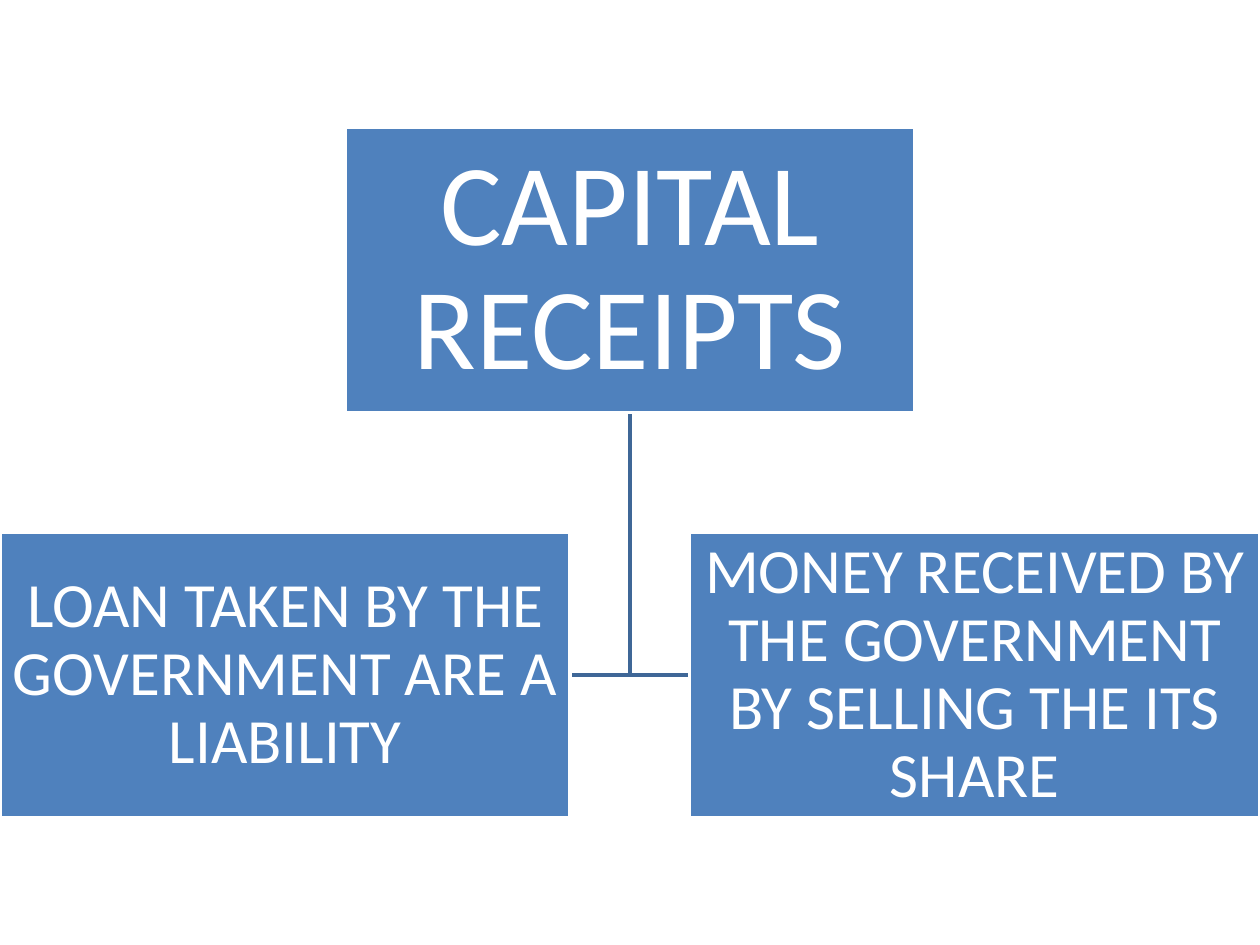
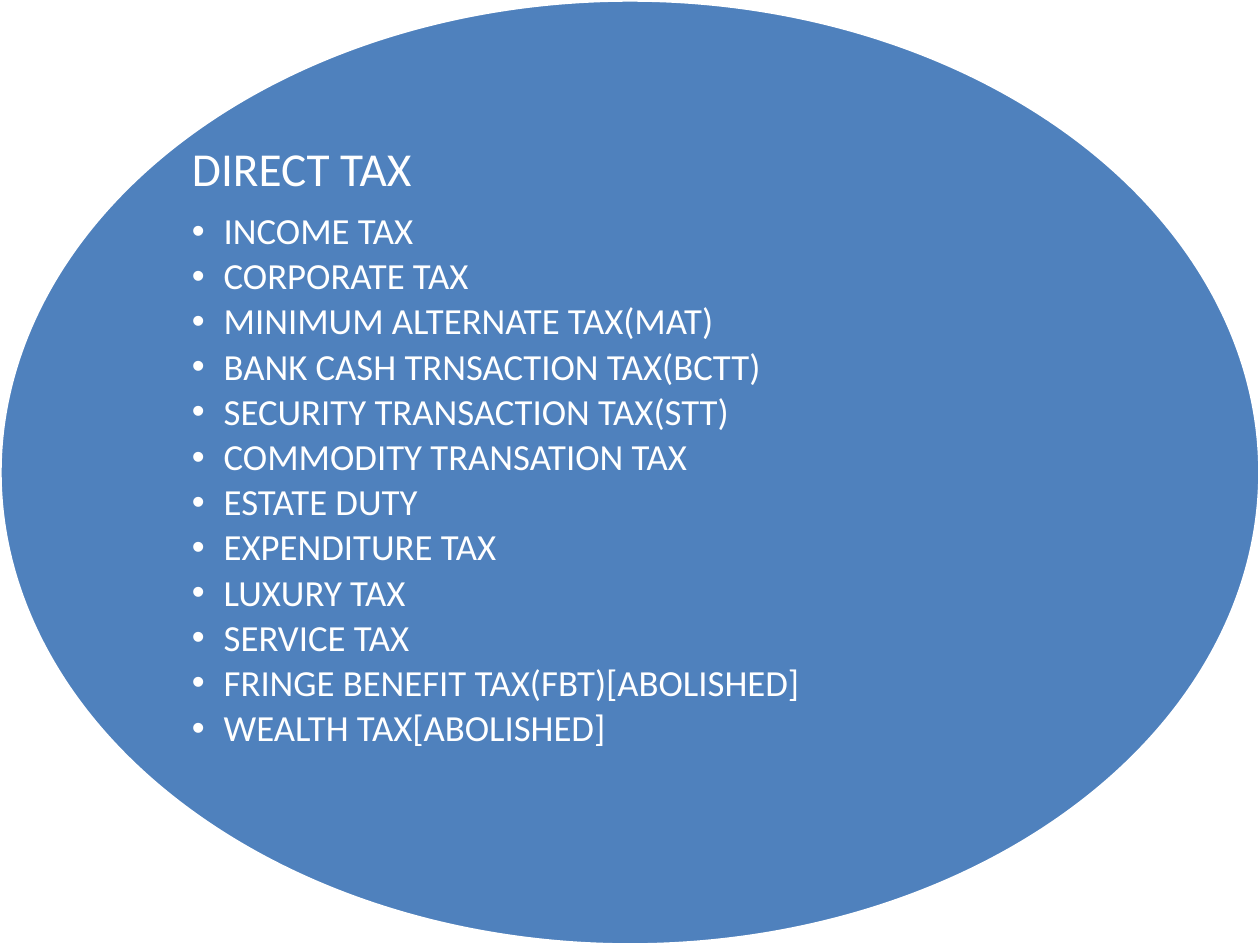
from dataclasses import dataclass

from pptx import Presentation
from pptx.dml.color import RGBColor
from pptx.enum.shapes import MSO_SHAPE
from pptx.enum.text import MSO_ANCHOR, MSO_AUTO_SIZE, PP_ALIGN
from pptx.util import Cm, Length, Pt

RECTANGLE, OVAL = MSO_SHAPE.RECTANGLE, MSO_SHAPE.OVAL
TOP, MIDDLE = MSO_ANCHOR.TOP, MSO_ANCHOR.MIDDLE
LEFT, CENTER = PP_ALIGN.LEFT, PP_ALIGN.CENTER
NO_AUTOFIT = MSO_AUTO_SIZE.NONE

BLUE = RGBColor(0x4F, 0x81, 0xBD)
DARK_BLUE = RGBColor(0x3F, 0x67, 0x97)
WHITE = RGBColor(0xFF, 0xFF, 0xFF)
FONT = "Calibri"
LINE_WIDTH = Pt(2)

SLIDE_WIDTH, SLIDE_HEIGHT = Cm(25.4), Cm(19.05)
BOX_WIDTH, BOX_HEIGHT = Cm(11.49), Cm(5.75)
BOX_GAP = Cm(2.41)
PARENT_TOP = (SLIDE_HEIGHT - 2 * BOX_HEIGHT - BOX_GAP) // 2
CHILD_TOP = PARENT_TOP + BOX_HEIGHT + BOX_GAP
CHILD_STEP = BOX_WIDTH + BOX_GAP
CHILD_LEFT = (SLIDE_WIDTH - BOX_WIDTH - CHILD_STEP) // 2
BULLET_INDENT = Cm(0.64)

CHILD_TEXTS = (
    "LOAN TAKEN BY THE GOVERNMENT ARE A LIABILITY",
    "MONEY RECEIVED BY THE GOVERNMENT BY SELLING THE ITS SHARE",
)
DIRECT_TAXES = (
    "INCOME TAX",
    "CORPORATE TAX",
    "MINIMUM ALTERNATE TAX(MAT)",
    "BANK CASH TRNSACTION TAX(BCTT)",
    "SECURITY TRANSACTION TAX(STT)",
    "COMMODITY TRANSATION TAX",
    "ESTATE DUTY",
    "EXPENDITURE TAX",
    "LUXURY TAX",
    "SERVICE TAX",
    "FRINGE BENEFIT TAX(FBT)[ABOLISHED]",
    "WEALTH TAX[ABOLISHED]",
)


@dataclass(frozen=True)
class TextStyle:
    size: Length
    inset: Length
    alignment: PP_ALIGN
    anchor: MSO_ANCHOR
    space_after: Length = Pt(0)


PARENT_STYLE = TextStyle(Pt(66), Cm(0.13), CENTER, MIDDLE)
CHILD_STYLE = TextStyle(Pt(36), Cm(0.08), CENTER, MIDDLE)
HEADING_STYLE = TextStyle(Pt(27), Cm(0.1), LEFT, TOP)
LIST_STYLE = TextStyle(Pt(21), Cm(0.1), LEFT, TOP, Pt(3.15))


def place(shape, left: int, top: int, width: int, height: int) -> None:
    shape.left, shape.top, shape.width, shape.height = left, top, width, height


def paint(shape) -> None:
    shape.fill.solid()
    shape.fill.fore_color.rgb = BLUE
    shape.line.color.rgb = WHITE
    shape.line.width = LINE_WIDTH


def write(shape, text: str, style: TextStyle) -> None:
    frame = shape.text_frame
    frame.text = text
    frame.word_wrap = True
    frame.auto_size = NO_AUTOFIT
    frame.vertical_anchor = style.anchor
    frame.margin_left = frame.margin_right = style.inset
    frame.margin_top = frame.margin_bottom = style.inset
    for paragraph in frame.paragraphs:
        paragraph.alignment = style.alignment
        paragraph.line_spacing = 0.9
        paragraph.space_before = Pt(0)
        paragraph.space_after = style.space_after
        paragraph.font.name = FONT
        paragraph.font.size = style.size
        paragraph.font.color.rgb = WHITE


def add_painted_shape(slide, kind: MSO_SHAPE, left: int, top: int, width: int, height: int):
    shape = slide.shapes.add_shape(kind, left, top, width, height)
    shape.shadow.inherit = False
    paint(shape)
    return shape


def send_to_back(slide, shape) -> None:
    slide.shapes._spTree.insert(2, shape._element)


def add_elbow(slide, start_x: int, start_y: int, end_x: int, end_y: int) -> None:
    builder = slide.shapes.build_freeform(start_x, start_y)
    builder.add_line_segments([(start_x, end_y), (end_x, end_y)], close=False)
    elbow = builder.convert_to_shape()
    elbow.shadow.inherit = False
    elbow.fill.background()
    elbow.line.color.rgb = DARK_BLUE
    elbow.line.width = LINE_WIDTH
    send_to_back(slide, elbow)


def build_capital_receipts(presentation) -> None:
    slide = presentation.slides.add_slide(presentation.slide_layouts[5])
    parent = slide.shapes.title
    place(parent, (SLIDE_WIDTH - BOX_WIDTH) // 2, PARENT_TOP, BOX_WIDTH, BOX_HEIGHT)
    paint(parent)
    write(parent, "CAPITAL RECEIPTS", PARENT_STYLE)

    for index, text in enumerate(CHILD_TEXTS):
        left = CHILD_LEFT + index * CHILD_STEP
        child = add_painted_shape(slide, RECTANGLE, left, CHILD_TOP, BOX_WIDTH, BOX_HEIGHT)
        write(child, text, CHILD_STYLE)
        inner_side = left + BOX_WIDTH if index == 0 else left
        add_elbow(slide, SLIDE_WIDTH // 2, PARENT_TOP + BOX_HEIGHT,
                  inner_side, CHILD_TOP + BOX_HEIGHT // 2)


def build_direct_tax(presentation) -> None:
    slide = presentation.slides.add_slide(presentation.slide_layouts[1])
    ellipse = add_painted_shape(slide, OVAL, 0, 0, SLIDE_WIDTH, SLIDE_HEIGHT)
    send_to_back(slide, ellipse)

    heading, tax_list = slide.shapes.title, slide.placeholders[1]
    place(heading, Cm(3.77), Cm(2.83), Cm(17.83), Cm(1.36))
    write(heading, "DIRECT TAX", HEADING_STYLE)
    place(tax_list, Cm(3.77), Cm(4.19), Cm(17.83), Cm(12.04))
    write(tax_list, "\n".join(DIRECT_TAXES), LIST_STYLE)
    for paragraph in tax_list.text_frame.paragraphs:
        properties = paragraph._p.get_or_add_pPr()
        properties.set("marL", str(BULLET_INDENT))
        properties.set("indent", str(-BULLET_INDENT))


def main() -> None:
    """Build the capital receipts and direct tax slides."""
    presentation = Presentation()
    presentation.slide_width, presentation.slide_height = SLIDE_WIDTH, SLIDE_HEIGHT
    build_capital_receipts(presentation)
    build_direct_tax(presentation)
    presentation.save("out.pptx")


if __name__ == "__main__":
    main()
